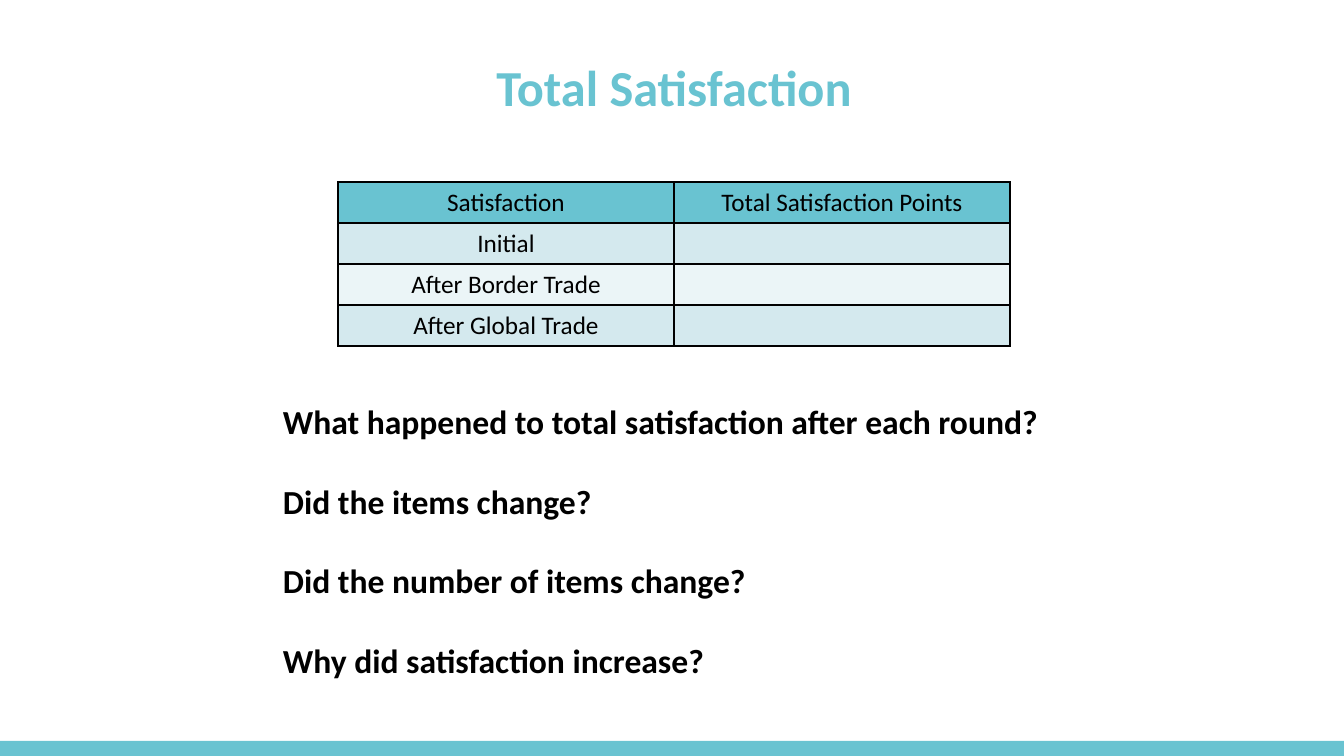
import pptx
import pptx.util
import pptx.dml.color
import pptx.enum.shapes
import pptx.enum.text
import pptx.oxml
import pptx.oxml.ns

PX = 914400 / 100.8
TEAL = pptx.dml.color.RGBColor(0x69, 0xC3, 0xD1)
PALE = pptx.dml.color.RGBColor(0xD4, 0xE9, 0xEE)
PALER = pptx.dml.color.RGBColor(0xEB, 0xF5, 0xF7)
BLACK = pptx.dml.color.RGBColor(0, 0, 0)
CENTER = pptx.enum.text.PP_ALIGN.CENTER
LEFT = pptx.enum.text.PP_ALIGN.LEFT


def px(*lengths):
    return [pptx.util.Emu(round(length * PX)) for length in lengths]


def write(paragraph, text, size, color, bold, alignment):
    paragraph.alignment = alignment
    span = paragraph.add_run()
    span.text = text
    span.font.color.rgb = color
    font_format = {"name": "Calibri", "size": pptx.util.Pt(size), "bold": bold}
    for name, value in font_format.items():
        setattr(span.font, name, value)


deck = pptx.Presentation()
deck.slide_width, deck.slide_height = px(1344, 756)
page = deck.slides.add_slide(deck.slide_layouts[6])

bar = page.shapes.add_shape(
    pptx.enum.shapes.MSO_SHAPE.RECTANGLE, *px(0, 741, 1344, 15))
bar.shadow.inherit = False
bar.fill.solid()
bar.fill.fore_color.rgb = TEAL
bar.line.fill.background()

questions = [
    "What happened to total satisfaction after each round?",
    "Did the items change?",
    "Did the number of items change?",
    "Why did satisfaction increase?",
]
text_boxes = [
    ((273, 396, 903, 336), questions, 24, BLACK, LEFT),
    ((338, 51, 672, 72), ["Total Satisfaction"], 36, TEAL, CENTER),
]
for place, lines, size, color, alignment in text_boxes:
    box = page.shapes.add_textbox(*px(*place))
    box.text_frame.word_wrap = True
    for index, line in enumerate(lines):
        if index == 0:
            para = box.text_frame.paragraphs[0]
        else:
            para = box.text_frame.add_paragraph()
            para.space_before = pptx.util.Pt(28)
        write(para, line, size, color, True, alignment)

rows = [
    (["Satisfaction", "Total Satisfaction Points"], TEAL),
    (["Initial", ""], PALE),
    (["After Border Trade", ""], PALER),
    (["After Global Trade", ""], PALE),
]
table = page.shapes.add_table(len(rows), 2, *px(338, 182, 672, 164)).table
for row, (labels, color) in zip(table.rows, rows):
    row.height = px(41)[0]
    for cell, label in zip(row.cells, labels):
        para = cell.text_frame.paragraphs[0]
        para.font.size = pptx.util.Pt(18)
        if label:
            write(para, label, 18, BLACK, False, CENTER)
        properties = cell._tc.get_or_add_tcPr()
        for side in ("lnL", "lnR", "lnT", "lnB"):
            properties.append(pptx.oxml.parse_xml(
                f'<a:{side} {pptx.oxml.ns.nsdecls("a")} w="12700"><a:solidFill>'
                f'<a:srgbClr val="{BLACK}"/></a:solidFill></a:{side}>'))
        cell.fill.solid()
        cell.fill.fore_color.rgb = color

deck.save("out.pptx")
